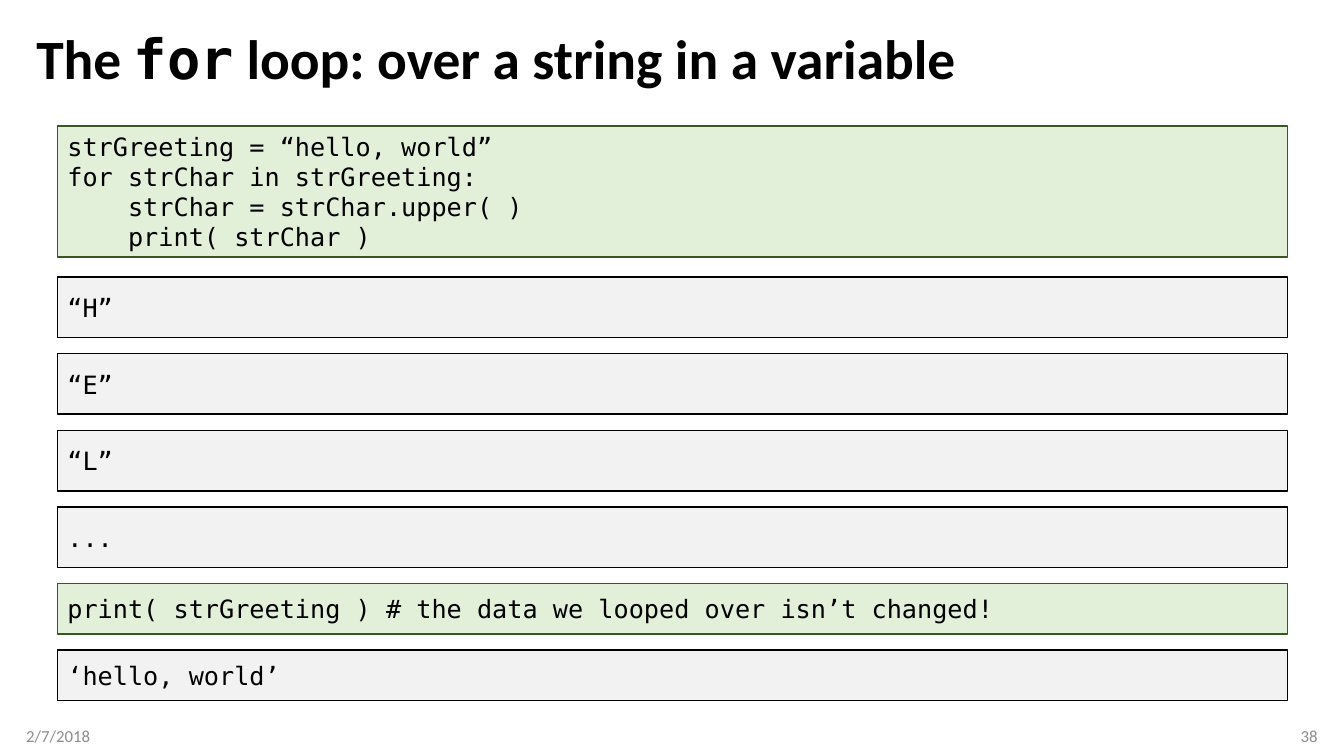
from pptx import Presentation
from pptx import util as u
from pptx.dml.color import RGBColor
from pptx.enum import shapes, text

PX = 9144  # EMU per px, 100 px to the inch
SANS, MONO = "Calibri", "DejaVu Sans Mono"
COLORS = {
    "ink": "000000",
    "footer": "8C8C8C",
    "code_fill": "E2F0D9",
    "code_line": "385723",
    "output_fill": "F2F2F2",
}

BOX_LEFT, BOX_WIDTH, FIRST_TOP = 57, 1220, 125
LOOP_CODE = [
    "strGreeting = “hello, world”",
    "for strChar in strGreeting:",
    "    strChar = strChar.upper( )",
    "    print( strChar )",
]
PRINT_CODE = ["print( strGreeting ) # the data we looped over isn’t changed!"]
# kind, lines, height, gap below
BOXES = [
    ("code", LOOP_CODE, 130, 20),
    *[("output", [line], 60, 16) for line in ("“H”", "“E”", "“L”", "...")],
    ("code", PRINT_CODE, 50, 16),
    ("output", ["‘hello, world’"], 50, 0),
]


def rgb(name):
    return RGBColor.from_string(COLORS[name])


def px(*lengths):
    return [u.Emu(length * PX) for length in lengths]


def write(frame, lines, size, color="ink", bold=False,
          align=text.PP_ALIGN.LEFT, spacing=1.0):
    """Fill a text frame; each line is a list of (words, font) runs."""
    frame.word_wrap = True
    frame.auto_size = text.MSO_AUTO_SIZE.NONE
    frame.vertical_anchor = text.MSO_ANCHOR.MIDDLE
    for index, line in enumerate(lines):
        paragraph = frame.add_paragraph() if index else frame.paragraphs[0]
        paragraph.alignment = align
        paragraph.line_spacing = spacing
        for words, font in line:
            run = paragraph.add_run()
            run.text = words
            run.font.name = font
            run.font.size = u.Pt(size)
            run.font.bold = bold
            run.font.color.rgb = rgb(color)


def add_title(slide):
    title = slide.shapes.title
    title.left, title.top, title.width, title.height = px(26, 25, 1281, 72)
    heading = [("The ", SANS), ("for", MONO),
               (" loop: over a string in a variable", SANS)]
    write(title.text_frame, [heading], 39.6, bold=True, spacing=0.9)


def add_footer(slide, words, left, align):
    """Add a footer entry that sits flush with its outer edge."""
    frame = slide.shapes.add_textbox(*px(left, 710, 300, 40)).text_frame
    if align == text.PP_ALIGN.RIGHT:
        frame.margin_right = 0
    else:
        frame.margin_left = 0
    write(frame, [[(words, SANS)]], 12, color="footer", align=align)


def add_box(slide, kind, lines, top, height):
    box = slide.shapes.add_shape(
        shapes.MSO_SHAPE.RECTANGLE, *px(BOX_LEFT, top, BOX_WIDTH, height))
    box.shadow.inherit = False
    box.fill.solid()
    box.fill.fore_color.rgb = rgb(f"{kind}_fill")
    box.line.color.rgb = rgb("code_line" if kind == "code" else "ink")
    box.line.width = u.Pt(1)
    write(box.text_frame, [[(line, MONO)] for line in lines], 18)


def main():
    deck = Presentation()
    deck.slide_width, deck.slide_height = px(1333, 750)
    slide = deck.slides.add_slide(deck.slide_layouts[5])
    add_title(slide)
    add_footer(slide, "2/7/2018", 26, text.PP_ALIGN.LEFT)
    add_footer(slide, "38", 1007, text.PP_ALIGN.RIGHT)
    top = FIRST_TOP
    for kind, lines, height, gap in BOXES:
        add_box(slide, kind, lines, top, height)
        top += height + gap
    deck.save("out.pptx")


if __name__ == "__main__":
    main()
